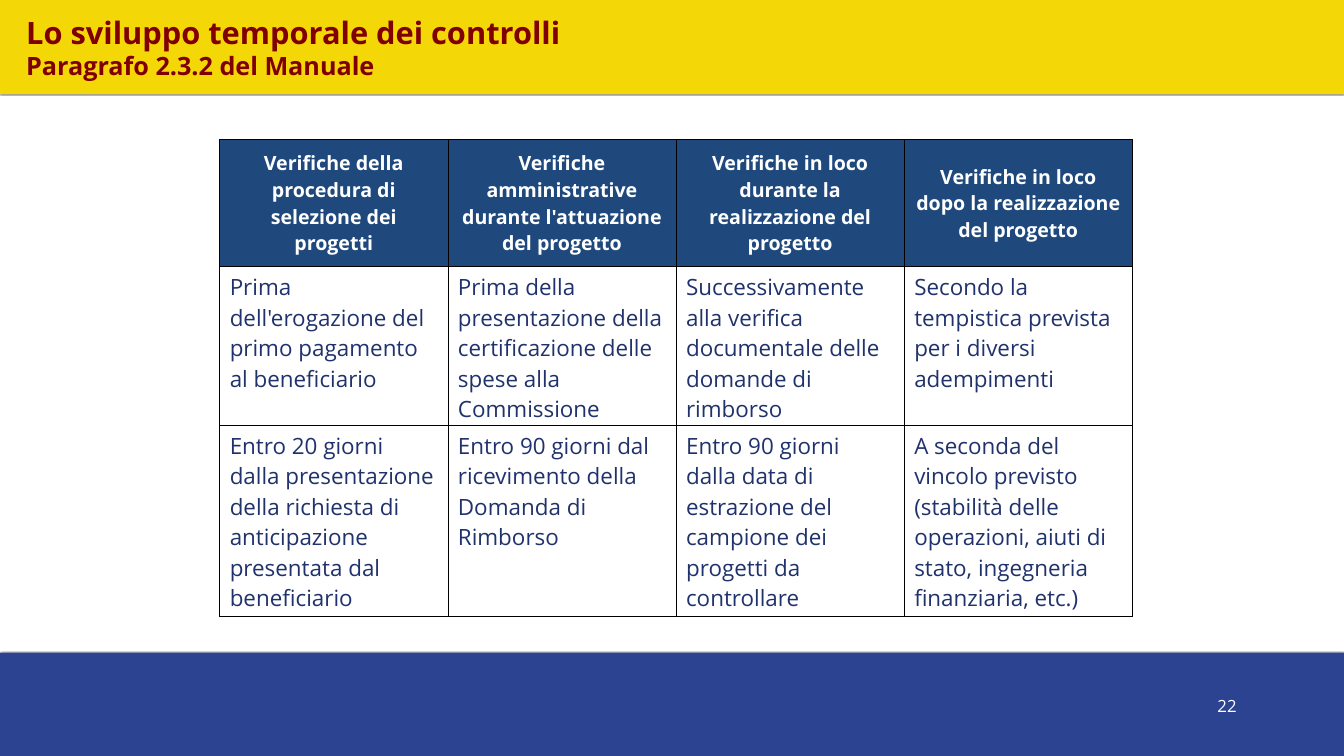
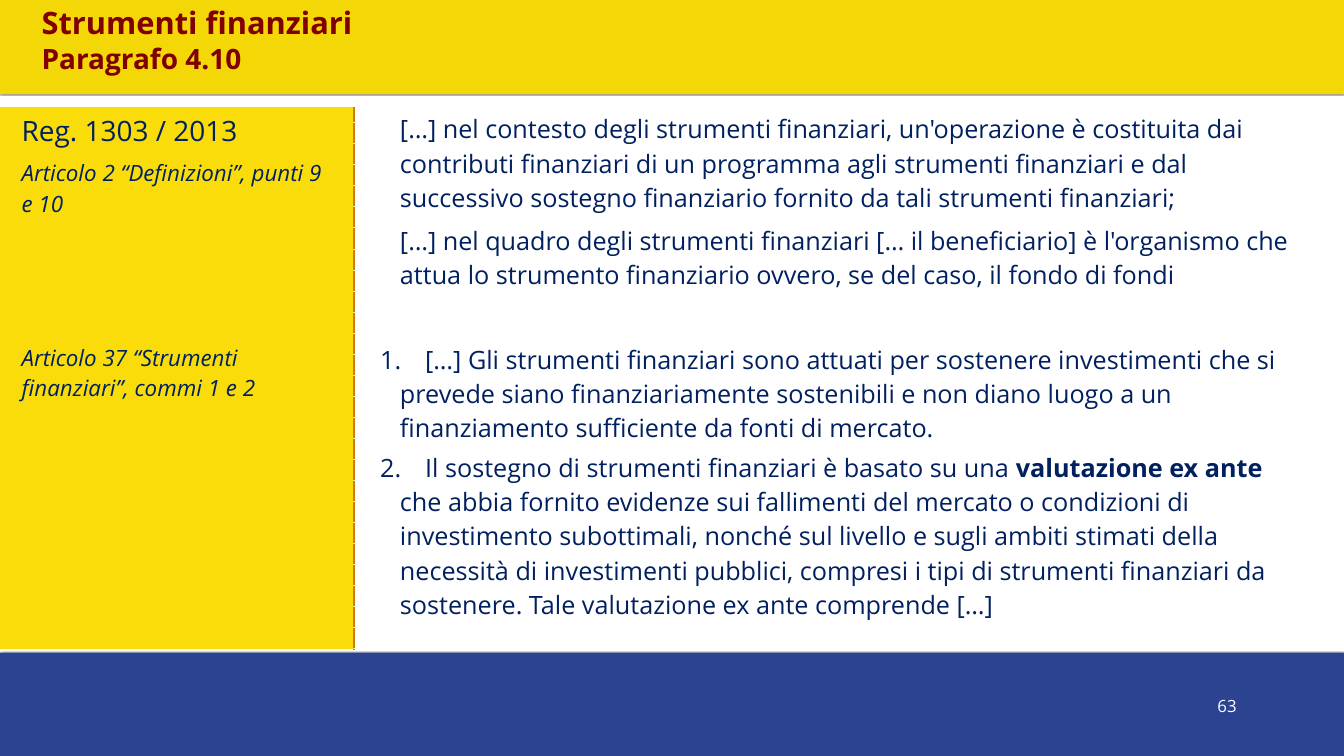
from lxml.etree import SubElement
from pptx import Presentation
from pptx.dml.color import RGBColor
from pptx.enum.shapes import MSO_SHAPE
from pptx.enum.text import MSO_ANCHOR, PP_ALIGN
from pptx.oxml.ns import qn
from pptx.util import Cm, Pt

FONT = "Open Sans"
BLUE = RGBColor(0x2B, 0x43, 0x90)
YELLOW = RGBColor(0xF3, 0xD7, 0x07)
SIDE_YELLOW = RGBColor(0xF9, 0xDC, 0x0A)
MAROON = RGBColor(0x80, 0x00, 0x00)
OFF_WHITE = RGBColor(0xFE, 0xFC, 0xFF)
WHITE = RGBColor(0xFF, 0xFF, 0xFF)
BLACK = RGBColor(0x00, 0x00, 0x00)
HEADER_BLUE = RGBColor(0x1F, 0x49, 0x7D)
CELL_BLUE = RGBColor(0x20, 0x32, 0x6C)
NAVY = RGBColor(0x00, 0x20, 0x60)
ORANGE = RGBColor(0xD0, 0x7C, 0x00)
PLAIN_TABLE_STYLE = "{2D5ABB26-0587-4C30-8999-92F81FD0307C}"

SLIDE_WIDTH, SLIDE_HEIGHT = Cm(67.74), Cm(38.1)
BAND_HEIGHT, FOOTER_HEIGHT = Cm(4.75), Cm(5.21)

CONTROLS = {
    "title": "Lo sviluppo temporale dei controlli",
    "subtitle": "Paragrafo 2.3.2 del Manuale",
    "subtitle_size": 36,
    "title_at": (Cm(1.07), Cm(0.53)),
    "number": "22",
}
CONTROL_ROWS = [
    ["Verifiche della procedura di selezione dei progetti",
     "Verifiche amministrative durante l'attuazione del progetto",
     "Verifiche in loco durante la realizzazione del progetto",
     "Verifiche in loco dopo la realizzazione del progetto"],
    ["Prima dell'erogazione del primo pagamento al beneficiario",
     "Prima della presentazione della certificazione delle spese alla Commissione",
     "Successivamente alla verifica documentale delle domande di rimborso",
     "Secondo la tempistica prevista per i diversi adempimenti"],
    ["Entro 20 giorni dalla presentazione della richiesta di anticipazione presentata dal beneficiario",
     "Entro 90 giorni dal ricevimento della Domanda di Rimborso",
     "Entro 90 giorni dalla data di estrazione del campione dei progetti da controllare",
     "A seconda del vincolo previsto (stabilità delle operazioni, aiuti di stato, "
     "ingegneria finanziaria, etc.)"],
]

INSTRUMENTS = {
    "title": "Strumenti finanziari",
    "subtitle": "Paragrafo 4.10",
    "subtitle_size": 40,
    "title_at": (Cm(1.85), Cm(0.13)),
    "number": "63",
}
# Each row: side paragraphs (text, size, italic, space before as share of size),
# then body paragraphs (text, space before); ** marks bold words.
INSTRUMENT_ROWS = [
    ([("Reg. 1303 / 2013", 40, False, 0.2),
      ("Articolo 2 “Definizioni”, punti 9 e 10", 32, True, 0.35)],
     [("\t[…] nel contesto degli strumenti finanziari, un'operazione è costituita dai contributi "
       "finanziari di un programma agli strumenti finanziari e dal successivo sostegno finanziario "
       "fornito da tali strumenti finanziari;", 0.2),
      ("\t[…] nel quadro degli strumenti finanziari [… il beneficiario] è l'organismo che attua lo "
       "strumento finanziario ovvero, se del caso, il fondo di fondi", 0.35)]),
    ([("Articolo 37 “Strumenti finanziari”, commi 1 e 2", 32, True, 0.35)],
     [("1.\t[…] Gli strumenti finanziari sono attuati per sostenere investimenti che si prevede "
       "siano finanziariamente sostenibili e non diano luogo a un finanziamento sufficiente da "
       "fonti di mercato.", 0.2),
      ("2.\tIl sostegno di strumenti finanziari è basato su una **valutazione ex ante** che abbia "
       "fornito evidenze sui fallimenti del mercato o condizioni di investimento subottimali, "
       "nonché sul livello e sugli ambiti stimati della necessità di investimenti pubblici, "
       "compresi i tipi di strumenti finanziari da sostenere. Tale valutazione ex ante "
       "comprende […]", 0.2)]),
]


def write(paragraph, text, size, color, bold=None, italic=None, align=PP_ALIGN.LEFT, before=0):
    """Fill a paragraph; words between ** marks are bold."""
    for index, part in enumerate(text.split("**")):
        run = paragraph.add_run()
        run.text = part
        if index % 2:
            run.font.bold = True
    font = paragraph.font
    font.name, font.size, font.bold, font.italic = FONT, Pt(size), bold, italic
    font.color.rgb = color
    paragraph.alignment = align
    paragraph.space_before = Pt(round(size * before, 1))


def next_paragraph(frame, index):
    return frame.add_paragraph() if index else frame.paragraphs[0]


def set_margins(target, left, top, right, bottom):
    target.margin_left, target.margin_top = Cm(left), Cm(top)
    target.margin_right, target.margin_bottom = Cm(right), Cm(bottom)


def add_band(slide, top, height, color):
    band = slide.shapes.add_shape(MSO_SHAPE.RECTANGLE, 0, top, SLIDE_WIDTH, height)
    band.fill.solid()
    band.fill.fore_color.rgb = color
    band.line.fill.background()
    band.shadow.inherit = False
    effects = band._element.spPr.find(qn("a:effectLst"))
    shadow = SubElement(effects, qn("a:outerShdw"), blurRad=str(Pt(2)), dist="0", dir="0")
    shade = SubElement(shadow, qn("a:srgbClr"), val=str(BLACK))
    SubElement(shade, qn("a:alpha"), val="50000")


def add_text_box(slide, left, top, width, height):
    frame = slide.shapes.add_textbox(left, top, width, height).text_frame
    frame.word_wrap = True
    return frame


def add_footer(slide, number):
    add_band(slide, SLIDE_HEIGHT - FOOTER_HEIGHT, FOOTER_HEIGHT, BLUE)
    frame = add_text_box(slide, Cm(60.6), Cm(34.98), Cm(2.49), Cm(1.35))
    set_margins(frame, 0.1, 0.1, 0.1, 0.1)
    write(frame.paragraphs[0], number, 24, OFF_WHITE, align=PP_ALIGN.CENTER)


def add_title(slide, content):
    add_band(slide, 0, BAND_HEIGHT, YELLOW)
    frame = add_text_box(slide, *content["title_at"], Cm(44.98), Cm(3.71))
    frame.vertical_anchor = MSO_ANCHOR.MIDDLE
    lines = [(content["title"], 44), (content["subtitle"], content["subtitle_size"])]
    for index, (text, size) in enumerate(lines):
        write(next_paragraph(frame, index), text, size, MAROON, bold=True)


def add_plain_table(slide, left, top, widths, heights):
    shape = slide.shapes.add_table(len(heights), len(widths), left, top, sum(widths), sum(heights))
    table = shape.table
    table.first_row = table.horz_banding = False
    table._tbl.tblPr.find(qn("a:tableStyleId")).text = PLAIN_TABLE_STYLE
    for column, width in zip(table.columns, widths):
        column.width = width
    for row, height in zip(table.rows, heights):
        row.height = height
    return table


def style_cell(cell, sides, color, width, dash="solid", fill=None):
    """Draw borders on the given sides (letters of LRTB, in that order) and set the fill."""
    properties = cell._tc.get_or_add_tcPr()
    for side in sides:
        line = SubElement(properties, qn(f"a:ln{side}"), w=str(Pt(width)))
        solid = SubElement(line, qn("a:solidFill"))
        SubElement(solid, qn("a:srgbClr"), val=str(color))
        SubElement(line, qn("a:prstDash"), val=dash)
    if fill is None:
        cell.fill.background()
    else:
        cell.fill.solid()
        cell.fill.fore_color.rgb = fill


def add_controls_table(slide):
    heights = [Cm(6.4), Cm(8), Cm(9.6)]
    table = add_plain_table(slide, Cm(11.07), Cm(7.04), [Cm(11.5)] * 4, heights)
    for row_index, texts in enumerate(CONTROL_ROWS):
        header = row_index == 0
        for column_index, text in enumerate(texts):
            cell = table.cell(row_index, column_index)
            style_cell(cell, "LRTB", BLACK, 1, fill=HEADER_BLUE if header else None)
            set_margins(cell, 0.51, 0.25, 0.51, 0.25)
            paragraph = cell.text_frame.paragraphs[0]
            if header:
                cell.vertical_anchor = MSO_ANCHOR.MIDDLE
                write(paragraph, text, 28, WHITE, bold=True, align=PP_ALIGN.CENTER)
            else:
                write(paragraph, text, 32, CELL_BLUE)


def add_instruments_table(slide):
    widths, heights = [Cm(17.86), Cm(48.41)], [Cm(11.61), Cm(15.72)]
    table = add_plain_table(slide, 0, Cm(5.38), widths, heights)
    for row_index, (side_texts, body_texts) in enumerate(INSTRUMENT_ROWS):
        side, body = table.cell(row_index, 0), table.cell(row_index, 1)
        style_cell(side, "R", ORANGE, 3, "sysDot", SIDE_YELLOW)
        style_cell(body, "L", ORANGE, 3, "sysDot")
        set_margins(side, 1.09, 0.25, 0.99, 0.25)
        set_margins(body, 1.3, 0.25, 0.51, 0.25)
        for index, (text, size, italic, before) in enumerate(side_texts):
            write(next_paragraph(side.text_frame, index), text, size, NAVY,
                  italic=italic, before=before)
        for index, (text, before) in enumerate(body_texts):
            paragraph = next_paragraph(body.text_frame, index)
            write(paragraph, text, 36, NAVY, before=before)
            indents = paragraph._p.get_or_add_pPr()
            indents.set("marL", str(Cm(1)))
            indents.set("indent", str(-Cm(1)))


def main():
    presentation = Presentation()
    presentation.slide_width, presentation.slide_height = SLIDE_WIDTH, SLIDE_HEIGHT
    pages = [(CONTROLS, add_controls_table), (INSTRUMENTS, add_instruments_table)]
    for content, add_content_table in pages:
        slide = presentation.slides.add_slide(presentation.slide_layouts[6])
        add_footer(slide, content["number"])
        add_content_table(slide)
        add_title(slide, content)
    presentation.save("out.pptx")


if __name__ == "__main__":
    main()
